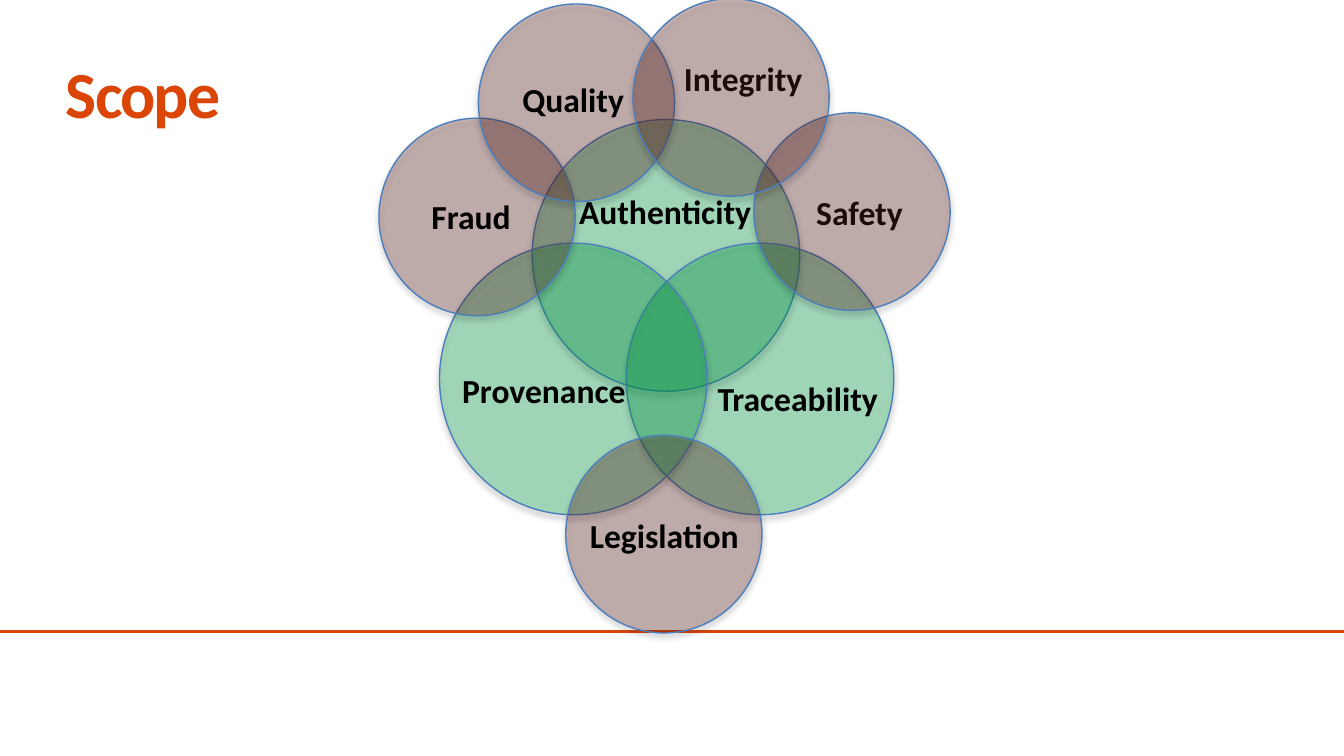
from lxml import etree
from pptx import Presentation
from pptx import util as u
from pptx.dml.color import RGBColor
from pptx.enum import shapes, text
from pptx.oxml.ns import qn

WIDTH = u.Inches(10)
HEIGHT = u.Emu(WIDTH * 9 // 16)
UNIT = WIDTH / 100  # side of a square grid cell, 100 columns across
FONT = "Calibri"
ORANGE, GREEN, MAROON, BLUE, BLACK = "DB4505", "00B050", "632523", "4B7EBC", "000000"
BIG, SMALL = (19.9, 20.2), (14.6, 14.7)
LABEL = (16.5, 4)
LEFT, CENTER = text.PP_ALIGN.LEFT, text.PP_ALIGN.CENTER

# name, circle (column, row), label (column, row), alignment
CORE = [
    ("Authenticity", (11.4, 9), (13.9, 13.8), LEFT),
    ("Traceability", (18.4, 18.2), (24.2, 27.7), LEFT),
    ("Provenance", (4.5, 18.2), (5.2, 27.1), LEFT),
]
OUTER = [
    ("Legislation", (13.9, 32.5), (14.7, 37.9), LEFT),
    ("Fraud", (0, 8.9), (-1.4, 14.2), CENTER),
    ("Safety", (27.9, 8.5), (27.5, 13.9), CENTER),
    ("Quality", (7.4, 0.4), (6.2, 5.5), CENTER),
    ("Integrity", (18.9, 0), (21.7, 3.9), LEFT),
]
VEILED = {"Safety", "Integrity"}  # labels lying under their circle


def rgb(color):
    return RGBColor.from_string(color)


def grid(*cells):
    return [u.Emu(round(c * UNIT)) for c in cells]


def add_effects(sp, shadow=False):
    """Give the shape its own effect list: a soft drop shadow, or none."""
    effects = etree.SubElement(sp._element.spPr, qn("a:effectLst"))
    if shadow:
        outer = etree.SubElement(effects, qn("a:outerShdw"), blurRad="40000",
                                 dist="23000", dir="5400000", rotWithShape="0")
        color = etree.SubElement(outer, qn("a:srgbClr"), val=BLACK)
        etree.SubElement(color, qn("a:alpha"), val="35000")


def add_text(s, box, words, size, color, align=LEFT, margins=None):
    tf = s.shapes.add_textbox(*grid(*box)).text_frame
    tf.word_wrap = True
    if margins is not None:
        tf.margin_left = tf.margin_right = tf.margin_top = tf.margin_bottom = margins
    p = tf.paragraphs[0]
    p.alignment = align
    r = p.add_run()
    r.text = words
    r.font.name, r.font.size, r.font.bold = FONT, u.Pt(size), True
    r.font.color.rgb = rgb(color)
    return r


def add_circle(s, box, color):
    sp = s.shapes.add_shape(shapes.MSO_SHAPE.OVAL, *grid(*box))
    sp.fill.solid()
    sp.fill.fore_color.rgb = rgb(color)
    fill = sp._element.spPr.find(qn("a:solidFill"))
    etree.SubElement(fill[0], qn("a:alpha"), val="30000")
    sp.line.color.rgb = rgb(BLUE)
    sp.line.width = u.Pt(0.75)
    add_effects(sp, shadow=True)


def add_title(s, box):
    r = add_text(s, box, "Scope", 35.2, ORANGE, margins=0)
    r._r.get_or_add_rPr().set("spc", "-100")


def add_footer_rule(s, left, right, row):
    x1, x2, y = grid(left, right, row)
    line = s.shapes.add_connector(shapes.MSO_CONNECTOR.STRAIGHT, x1, y, x2, y)
    line.line.color.rgb = rgb(ORANGE)
    line.line.width = u.Pt(1.5)
    add_effects(line)


def add_scope_diagram(s, left, top):
    def circle(place, size, color):
        add_circle(s, (left + place[0], top + place[1], *size), color)

    def label(name, place, align):
        add_text(s, (left + place[0], top + place[1], *LABEL), name, 18, BLACK, align)

    for _, place, _, _ in CORE:
        circle(place, BIG, GREEN)
    for name, _, place, align in CORE:
        label(name, place, align)
    for name, place, label_place, align in OUTER:
        if name in VEILED:
            label(name, label_place, align)
        circle(place, SMALL, MAROON)
        if name not in VEILED:
            label(name, label_place, align)


def main():
    prs = Presentation()
    prs.slide_width, prs.slide_height = WIDTH, HEIGHT
    s = prs.slides.add_slide(prs.slide_layouts[6])
    add_footer_rule(s, -1.1, 101.3, 47)
    add_title(s, (4.9, 3.9, 56.1, 10.7))
    add_scope_diagram(s, 28.2, -0.1)
    prs.save("out.pptx")


if __name__ == "__main__":
    main()
